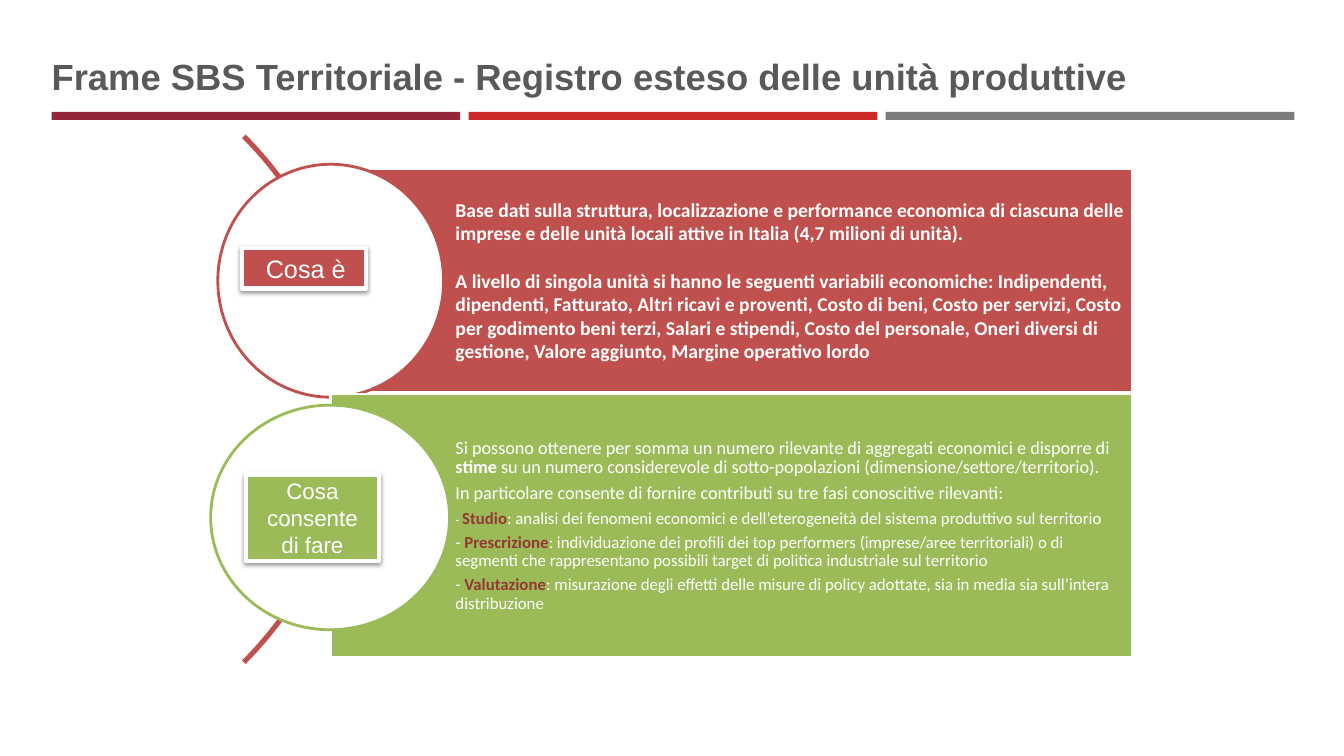
from dataclasses import dataclass
from math import cos, radians, sin

from lxml.etree import SubElement
from pptx import Presentation
from pptx.dml.color import RGBColor
from pptx.enum.shapes import MSO_SHAPE as Preset
from pptx.enum.text import MSO_ANCHOR as Anchor, PP_ALIGN as Align
from pptx.oxml.ns import qn
from pptx.util import Cm, Pt


@dataclass(frozen=True)
class Theme:
    red: str = "C0504D"
    green: str = "9BBB59"
    white: str = "FFFFFF"
    keyword: str = "953735"
    title: str = "595959"
    bars: tuple[str, ...] = ("942639", "CC2A2A", "7B7C7E")
    heading_font: str = "Arial"
    body_font: str = "Calibri"
    title_size: float = 26
    fact_size: float = 14
    intro_size: float = 13
    phase_size: float = 12
    dash_size: float = 9


@dataclass(frozen=True)
class Area:
    left: float
    top: float
    width: float
    height: float

    def lengths(self) -> tuple:
        return Cm(self.left), Cm(self.top), Cm(self.width), Cm(self.height)


@dataclass(frozen=True)
class Span:
    text: str
    size: float
    bold: bool = False
    color: str = "FFFFFF"


@dataclass(frozen=True)
class Para:
    spans: tuple[Span, ...]
    before: float = 0
    after: float = 0


@dataclass(frozen=True)
class Section:
    color: str
    band: Area
    circle: Area
    label_area: Area
    label: Para
    label_format: dict
    paras: tuple[Para, ...]
    line_spacing: float


THEME = Theme()


def phase(name: str, text: str, dash_size: float = THEME.phase_size) -> Para:
    size = THEME.phase_size
    return Para((Span("- ", dash_size), Span(name, size, True, THEME.keyword),
                 Span(f": {text}", size)), after=4.2)


def intro(*spans: Span) -> Para:
    return Para(spans, after=4.5)


SECTIONS = (
    Section(
        THEME.red, Area(8.33, 4.24, 20.22, 5.64), Area(5.49, 4.14, 5.69, 5.87),
        Area(6.1, 6.25, 3.12, 1.02), Para((Span("Cosa è", 18),)),
        dict(anchor=Anchor.TOP, insets=(0.6, 0.13, 0.25, 0.13)),
        (
            Para((Span("Base dati sulla struttura, localizzazione e performance economica di "
                       "ciascuna delle imprese e delle unità locali attive in Italia "
                       "(4,7 milioni di unità).", THEME.fact_size, True),)),
            Para((Span("A livello di singola unità si hanno le seguenti variabili economiche: "
                       "Indipendenti, dipendenti, Fatturato, Altri ricavi e proventi, Costo di "
                       "beni, Costo per servizi, Costo per godimento beni terzi, Salari e "
                       "stipendi, Costo del personale, Oneri diversi di gestione, Valore "
                       "aggiunto, Margine operativo lordo", THEME.fact_size, True),), before=17),
        ), 1.0),
    Section(
        THEME.green, Area(8.33, 9.93, 20.22, 6.63), Area(5.31, 10.21, 6.02, 5.66),
        Area(6.2, 11.96, 3.35, 2.18), Para((Span("Cosa consente di fare", 16),)),
        dict(align=Align.CENTER, insets=(0.25, 0.13, 0.25, 0.13)),
        (
            intro(Span("Si possono ottenere per somma un numero rilevante di aggregati "
                       "economici e disporre di ", THEME.intro_size),
                  Span("stime ", THEME.intro_size, True),
                  Span("su un numero considerevole di sotto-popolazioni "
                       "(dimensione/settore/territorio).", THEME.intro_size)),
            intro(Span("In particolare consente di fornire contributi su tre fasi conoscitive "
                       "rilevanti:", THEME.intro_size)),
            phase("Studio", "analisi dei fenomeni economici e dell’eterogeneità del sistema "
                  "produttivo sul territorio", THEME.dash_size),
            phase("Prescrizione", "individuazione dei profili dei top performers (imprese/aree "
                  "territoriali) o di segmenti che rappresentano possibili target di politica "
                  "industriale sul territorio"),
            phase("Valutazione", "misurazione degli effetti delle misure di policy adottate, sia "
                  "in media sia sull’intera distribuzione"),
        ), 0.9),
)


def rgb(color: str) -> RGBColor:
    return RGBColor.from_string(color)


def add_figure(slide, preset, area: Area, fill: str, line: str | None = None, weight: float = 2):
    figure = slide.shapes.add_shape(preset, *area.lengths())
    figure.shadow.inherit = False
    figure.fill.solid()
    figure.fill.fore_color.rgb = rgb(fill)
    if line:
        figure.line.color.rgb = rgb(line)
        figure.line.width = Pt(weight)
    else:
        figure.line.fill.background()
    return figure


def write_text(box, paras: tuple[Para, ...], *, font: str, anchor=Anchor.MIDDLE,
               align=Align.LEFT, insets=(0.0, 0.0, 0.0, 0.0), line_spacing=1.0) -> None:
    """Fill a box; insets are left, top, right and bottom in centimetres."""
    frame = box.text_frame
    frame.word_wrap = True
    frame.vertical_anchor = anchor
    (frame.margin_left, frame.margin_top,
     frame.margin_right, frame.margin_bottom) = map(Cm, insets)
    for index, para in enumerate(paras):
        paragraph = frame.add_paragraph() if index else frame.paragraphs[0]
        paragraph.alignment = align
        paragraph.line_spacing = line_spacing
        paragraph.space_before = Pt(para.before)
        paragraph.space_after = Pt(para.after)
        for span in para.spans:
            run = paragraph.add_run()
            run.text = span.text
            run.font.name = font
            run.font.size = Pt(span.size)
            run.font.bold = span.bold
            run.font.color.rgb = rgb(span.color)


def add_drop_shadow(figure) -> None:
    effects = figure._element.spPr.find(qn("a:effectLst"))
    shadow = SubElement(effects, qn("a:outerShdw"), blurRad=str(Pt(3.1)), dist=str(Pt(1.6)),
                        dir="5400000", rotWithShape="0")
    color = SubElement(shadow, qn("a:srgbClr"), val="000000")
    SubElement(color, qn("a:alpha"), val="38000")


def add_arc(slide) -> None:
    """Draw the quarter circle that runs behind both discs."""
    center_x, center_y, radius = -0.48, 10.06, 9.37
    points = [(Cm(center_x + radius * cos(radians(angle))),
               Cm(center_y + radius * sin(radians(angle)))) for angle in range(-45, 46)]
    builder = slide.shapes.build_freeform(*points[0])
    builder.add_line_segments(points[1:], close=False)
    arc = builder.convert_to_shape()
    arc.shadow.inherit = False
    arc.fill.background()
    arc.line.color.rgb = rgb(THEME.red)
    arc.line.width = Pt(3.6)
    SubElement(arc.line._get_or_add_ln(), qn("a:round"))


def add_section(slide, section: Section) -> None:
    band = add_figure(slide, Preset.RECTANGLE, section.band, section.color, THEME.white)
    write_text(band, section.paras, font=THEME.body_font, insets=(3.15, 0.1, 0.1, 0.1),
               line_spacing=section.line_spacing)
    add_figure(slide, Preset.OVAL, section.circle, THEME.white, section.color)


def add_label(slide, section: Section) -> None:
    label = add_figure(slide, Preset.RECTANGLE, section.label_area, section.color,
                       THEME.white, 3)
    add_drop_shadow(label)
    write_text(label, (section.label,), font=THEME.heading_font, **section.label_format)


def add_header(slide) -> None:
    for index, color in enumerate(THEME.bars):
        add_figure(slide, Preset.RECTANGLE, Area(1.3 + index * 10.51, 2.82, 10.3, 0.2), color)
    title = slide.shapes.add_textbox(*Area(1.3, 1.4, 31.29, 1.07).lengths())
    heading = Span("Frame SBS Territoriale - Registro esteso delle unità produttive",
                   THEME.title_size, True, THEME.title)
    write_text(title, (Para((heading,)),), font=THEME.heading_font, anchor=Anchor.TOP,
               line_spacing=Pt(30))


def main() -> None:
    deck = Presentation()
    deck.slide_width, deck.slide_height = Cm(33.87), Cm(19.05)
    page = deck.slides.add_slide(deck.slide_layouts[6])
    add_arc(page)
    for section in SECTIONS:
        add_section(page, section)
    for section in SECTIONS:
        add_label(page, section)
    add_header(page)
    deck.save("out.pptx")


if __name__ == "__main__":
    main()
